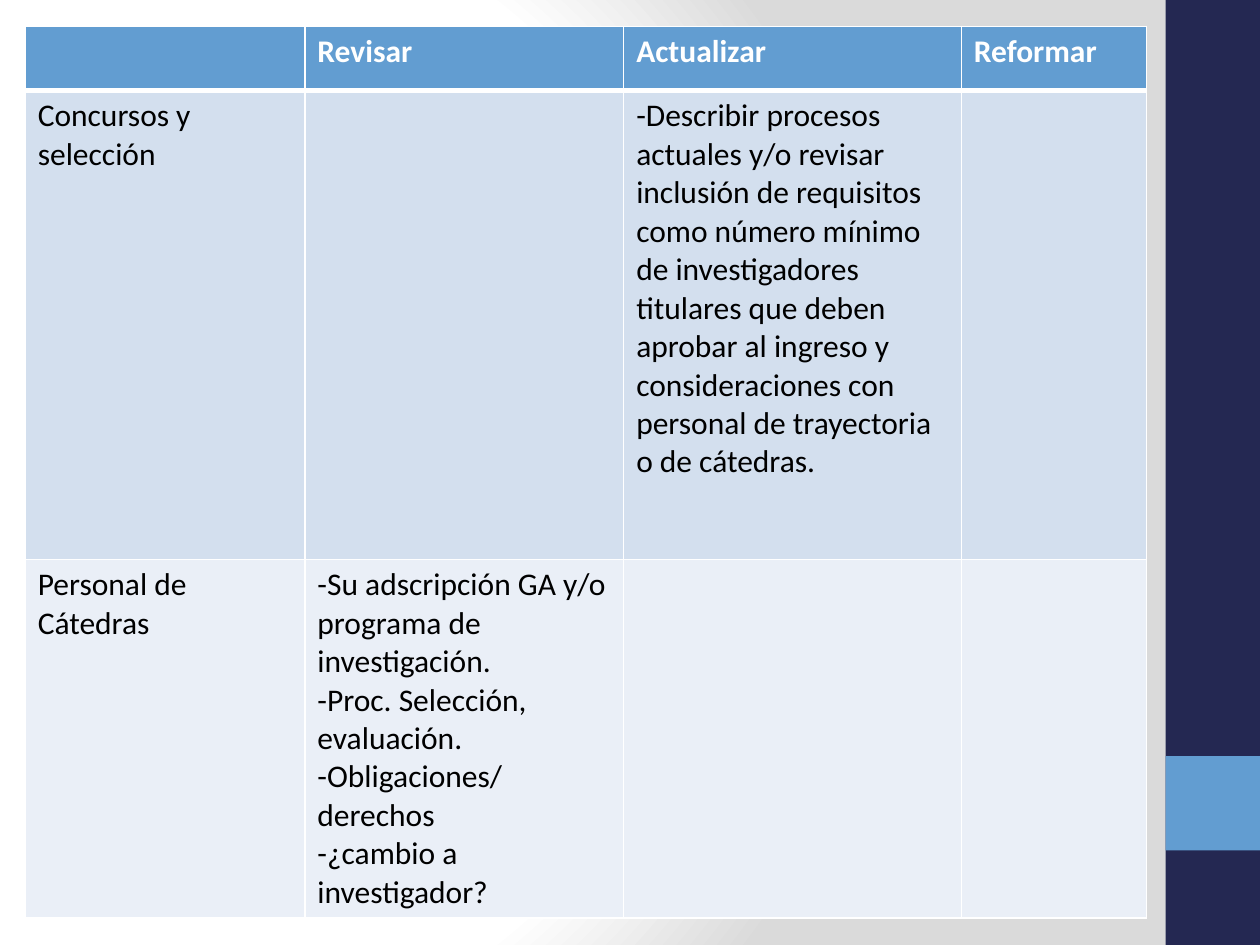
from dataclasses import dataclass

from lxml.etree import SubElement
from pptx import Presentation
from pptx.dml.color import RGBColor
from pptx.enum.shapes import MSO_SHAPE as Preset
from pptx.oxml.ns import qn
from pptx.slide import Slide
from pptx.util import Inches, Pt

WHITE = RGBColor(0xFF, 0xFF, 0xFF)
BLACK = RGBColor(0x00, 0x00, 0x00)
GREY = RGBColor(0xDA, 0xDA, 0xDA)
NAVY = RGBColor(0x24, 0x28, 0x52)
BLUE = RGBColor(0x62, 0x9D, 0xD1)
BAND_DARK = RGBColor(0xD3, 0xDF, 0xEE)
BAND_LIGHT = RGBColor(0xEA, 0xEF, 0xF7)

COLUMN_WIDTHS = (2.22, 2.53, 2.68, 1.47)
ROW_HEIGHTS = (0.51, 3.72, 2.7)
ROW_FILLS = (BLUE, BAND_DARK, BAND_LIGHT)
HIRING = (
    "-Describir procesos actuales y/o revisar inclusión de requisitos como "
    "número mínimo de investigadores titulares que deben aprobar al ingreso y "
    "consideraciones con personal de trayectoria o de cátedras."
)
CHAIRS = (
    "-Su adscripción GA y/o programa de investigación.\n"
    "-Proc. Selección, evaluación.\n"
    "-Obligaciones/ derechos\n"
    "-¿cambio a investigador?"
)
ACTIONS = (
    ("", "Revisar", "Actualizar", "Reformar"),
    ("Concursos y selección", "", HIRING, ""),
    ("Personal de Cátedras", CHAIRS, "", ""),
)


@dataclass
class Page:
    """Draws the elements of one slide in a shared style."""

    slide: Slide
    font: str = "Calibri"
    size: int = 18

    def backdrop(self, stops, focus):
        self.slide.background.fill.gradient()
        gradient = self.slide.element.find(".//" + qn("a:gradFill"))
        for part in list(gradient):
            gradient.remove(part)
        stop_list = SubElement(gradient, qn("a:gsLst"))
        for percent, color in stops:
            stop = SubElement(stop_list, qn("a:gs"), pos=str(percent * 1000))
            SubElement(stop, qn("a:srgbClr"), val=str(color))
        circle = SubElement(gradient, qn("a:path"), path="circle")
        edges = {side: str(percent * 1000) for side, percent in zip("ltrb", focus)}
        SubElement(circle, qn("a:fillToRect"), **edges)

    def block(self, left, top, width, height, color):
        rect = self.slide.shapes.add_shape(
            Preset.RECTANGLE, Inches(left), Inches(top), Inches(width), Inches(height)
        )
        rect.shadow.inherit = False
        rect.fill.solid()
        rect.fill.fore_color.rgb = color
        rect.line.fill.background()

    def border(self, cell, side, points):
        properties = cell._tc.get_or_add_tcPr()
        line = SubElement(properties, qn(f"a:ln{side}"), w=str(Pt(points)))
        SubElement(SubElement(line, qn("a:solidFill")), qn("a:srgbClr"), val=str(WHITE))

    def cell(self, cell, text, fill, header, top_border):
        for side, points in zip("LRTB", (1, 1, top_border, 3 if header else 1)):
            self.border(cell, side, points)
        cell.fill.solid()
        cell.fill.fore_color.rgb = fill
        cell.text = text
        for paragraph in cell.text_frame.paragraphs:
            paragraph.font.name = self.font
            paragraph.font.size = Pt(self.size)
            paragraph.font.bold = header
            paragraph.font.color.rgb = WHITE if header else BLACK

    def table(self, left, top, widths, heights, rows, fills):
        table = self.slide.shapes.add_table(
            len(heights), len(widths), Inches(left), Inches(top),
            Inches(sum(widths)), Inches(sum(heights)),
        ).table
        for column, width in zip(table.columns, widths):
            column.width = Inches(width)
        for index, (height, texts, fill) in enumerate(zip(heights, rows, fills)):
            table.rows[index].height = Inches(height)
            for column, text in enumerate(texts):
                self.cell(
                    table.cell(index, column), text, fill,
                    header=index == 0, top_border=3 if index == 1 else 1,
                )


def main():
    deck = Presentation()
    deck.slide_width, deck.slide_height = Inches(10), Inches(7.5)
    page = Page(deck.slides.add_slide(deck.slide_layouts[6]))
    page.backdrop(((0, WHITE), (75, WHITE), (100, GREY)), focus=(20, 50, 100, 50))
    page.block(9.25, 0, 0.75, 7.5, NAVY)
    page.block(9.25, 6, 0.75, 0.75, BLUE)
    page.table(0.2, 0.21, COLUMN_WIDTHS, ROW_HEIGHTS, ACTIONS, ROW_FILLS)
    deck.save("out.pptx")


if __name__ == "__main__":
    main()
